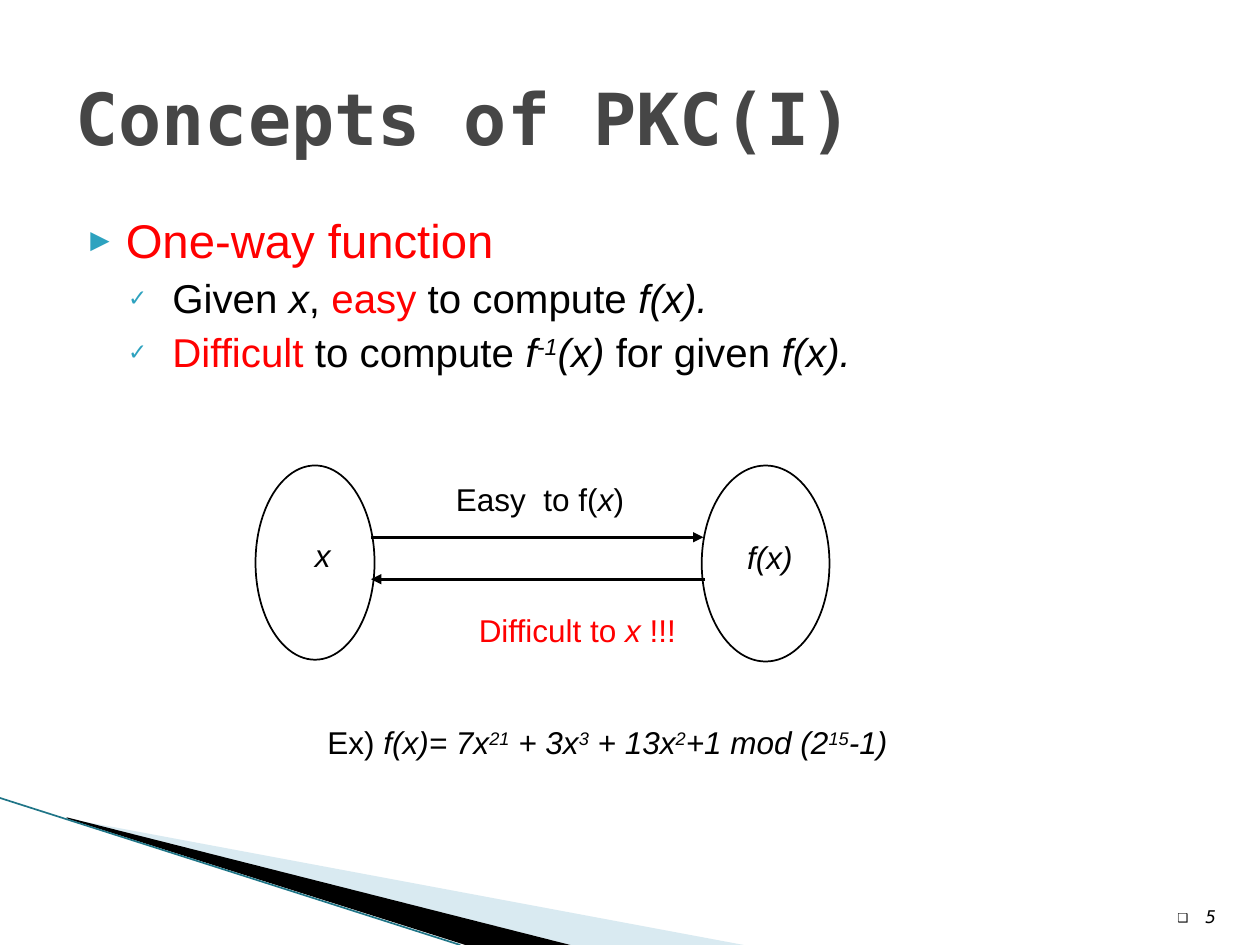
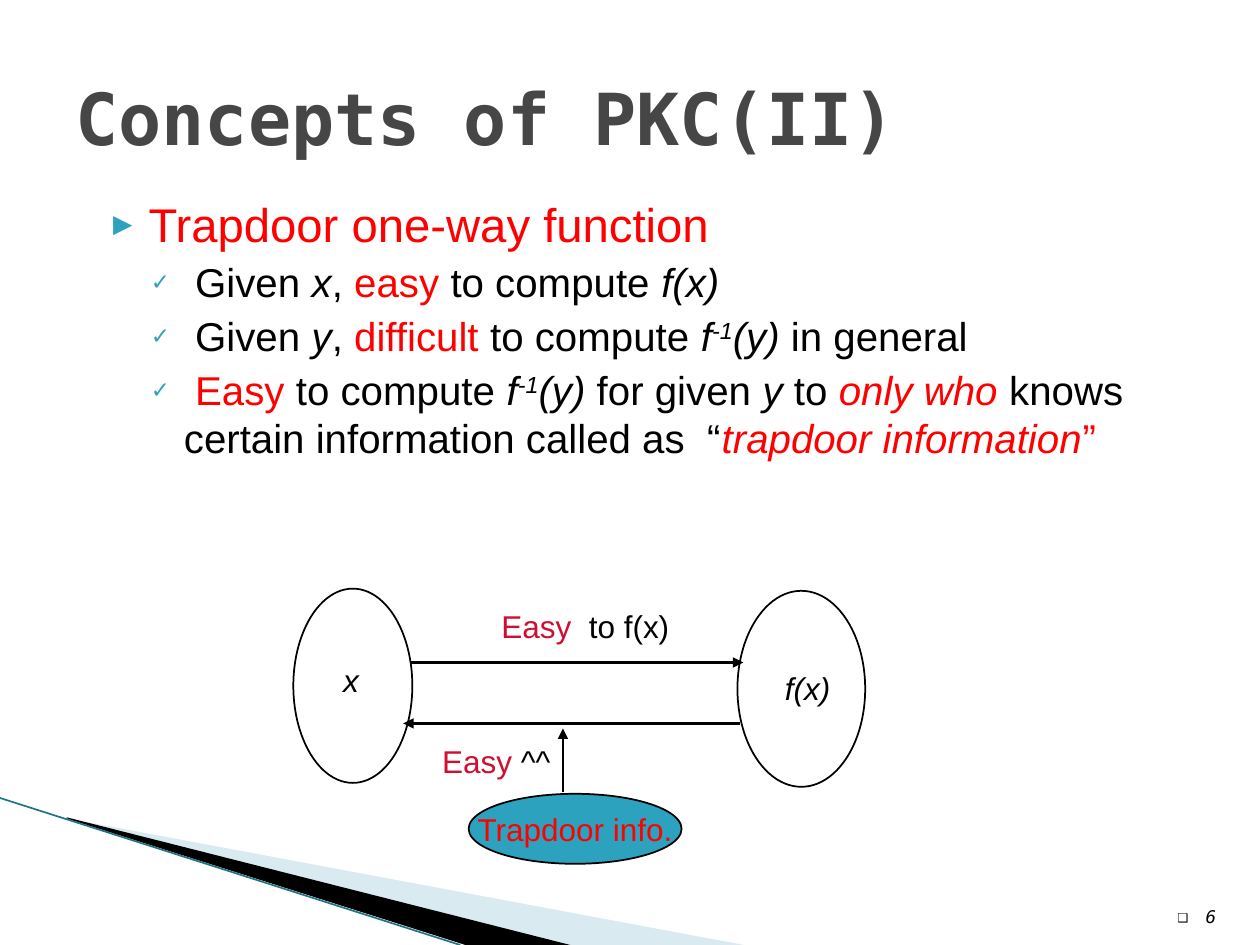
from dataclasses import dataclass

import pptx
import pptx.dml.color
import pptx.enum.shapes
import pptx.enum.text
import pptx.oxml
import pptx.oxml.ns
import pptx.util

Pt = pptx.util.Pt
Shape = pptx.enum.shapes.MSO_SHAPE
Line = pptx.enum.shapes.MSO_CONNECTOR
Align = pptx.enum.text.PP_ALIGN
Anchor = pptx.enum.text.MSO_ANCHOR


@dataclass(frozen=True)
class Theme:
    sans: str = "Arial"
    mono: str = "DejaVu Sans Mono"
    black: str = "000000"
    gray: str = "464646"
    red: str = "FF0000"
    crimson: str = "CF0E30"
    teal: str = "2DA2BF"
    edge: str = "1F7587"
    pale: str = "A0CBDC"
    title: int = 41
    head: int = 27
    item: int = 23
    label: int = 18
    page: int = 10


def rgb(code):
    return pptx.dml.color.RGBColor.from_string(code)


def add_xml(parent, tag, body="", **attrs):
    space = pptx.oxml.ns.nsdecls("a")
    pairs = " ".join(f'{key}="{val}"' for key, val in attrs.items())
    node = pptx.oxml.parse_xml(f"<a:{tag} {space} {pairs}>{body}</a:{tag}>")
    parent.append(node)


class Deck:
    def __init__(self, theme):
        self.theme = theme
        self.show = pptx.Presentation()
        self.show.slide_width, self.show.slide_height = Pt(720), Pt(540)
        self.slide = None

    def open(self, title, page):
        theme = self.theme
        self.slide = self.show.slides.add_slide(self.show.slide_layouts[6])
        self.band([(40, 468), (425, 540), (326, 540)], theme.pale, 40)
        self.band([(38, 467), (326, 540), (266, 540), (39, 468)], theme.black)
        self.line((0, 456), (263, 540), theme.edge, 0.95)
        frame = self.frame((36, 21.6, 648, 90), Anchor.MIDDLE, True)
        self.fill(frame.paragraphs[0], [(title, "b")], theme.title, theme.gray, theme.mono)
        frame = self.frame((663, 504, 39, 29), Anchor.BOTTOM, True)
        para = frame.paragraphs[0]
        para.alignment = Align.RIGHT
        self.mark(para, "❑", 16, -16, theme.black, 100)
        self.fill(para, [(str(page), "i")], theme.page, theme.black, theme.mono)

    def band(self, points, color, alpha=100):
        pen = self.slide.shapes.build_freeform(*points[0], scale=Pt(1))
        pen.add_line_segments(points[1:])
        shape = pen.convert_to_shape()
        shape.shadow.inherit = False
        shape.line.fill.background()
        shape.fill.solid()
        shape.fill.fore_color.rgb = rgb(color)
        if alpha < 100:
            tint = shape.fill._xPr.solidFill[0]
            add_xml(tint, "alpha", val=alpha * 1000)

    def line(self, start, end, color, width):
        line = self.slide.shapes.add_connector(
            Line.STRAIGHT, *(Pt(n) for n in start + end))
        line.line.color.rgb = rgb(color)
        line.line.width = Pt(width)
        add_xml(line._element.spPr, "effectLst")
        return line

    def arrow(self, start, end, width=1.5):
        line = self.line(start, end, self.theme.black, width)
        add_xml(line.line._get_or_add_ln(), "tailEnd", type="triangle")

    def oval(self, box, color=None, runs=None):
        shape = self.slide.shapes.add_shape(Shape.OVAL, *(Pt(n) for n in box))
        shape.shadow.inherit = False
        shape.line.color.rgb = rgb(self.theme.black)
        shape.line.width = Pt(1)
        if color:
            shape.fill.solid()
            shape.fill.fore_color.rgb = rgb(color)
        else:
            shape.fill.background()
        if runs:
            frame = shape.text_frame
            frame.word_wrap = False
            frame.vertical_anchor = Anchor.MIDDLE
            para = frame.paragraphs[0]
            para.alignment = Align.CENTER
            self.fill(para, runs, self.theme.label)

    def frame(self, box, anchor, wrap):
        frame = self.slide.shapes.add_textbox(*(Pt(n) for n in box)).text_frame
        frame.word_wrap = wrap
        frame.vertical_anchor = anchor
        return frame

    def fill(self, para, runs, size, color=None, face=None):
        theme = self.theme
        shades = {"r": theme.red, "c": theme.crimson}
        for text, style in runs:
            run = para.add_run()
            run.text = text
            font = run.font
            font.name = face or theme.sans
            font.size = Pt(size)
            font.bold = "b" in style
            font.italic = "i" in style
            shade = next((shades[key] for key in style if key in shades), None)
            font.color.rgb = rgb(shade or color or theme.black)
            if "^" in style:
                run._r.get_or_add_rPr().set("baseline", "30000")

    def mark(self, para, sign, left, hang, color, scale):
        props = para._p.get_or_add_pPr()
        props.set("marL", str(Pt(left)))
        props.set("indent", str(Pt(hang)))
        add_xml(props, "buClr", f'<a:srgbClr val="{color}"/>')
        add_xml(props, "buSzPct", val=scale * 1000)
        add_xml(props, "buFont", typeface=self.theme.mono)
        add_xml(props, "buChar", char=sign)

    def label(self, left, top, width, runs):
        frame = self.frame((left, top, width, 29), Anchor.TOP, False)
        self.fill(frame.paragraphs[0], runs, self.theme.label)

    def list(self, box, head, items):
        theme = self.theme
        frame = self.frame(box, Anchor.TOP, True)
        para = frame.paragraphs[0]
        self.mark(para, "▶", 28.8, -20.2, theme.teal, 68)
        self.fill(para, [(head, "r")], theme.head)
        for runs in items:
            para = frame.add_paragraph()
            para.space_before = Pt(3.2)
            self.mark(para, "✓", 49, -18, theme.teal, 65)
            self.fill(para, runs, theme.item)

    def pair(self, source, image):
        self.oval((*source, 68, 111))
        self.oval((*image, 73, 112))


def given(name):
    return [(" Given ", ""), (name, "i"), (", ", "")]


def inverse(name):
    return [(" to compute ", ""), ("f", "i"), ("-1", "i^"), (f"({name})", "i")]


def one_way(deck):
    deck.open("Concepts of PKC(I)", 5)
    deck.list((36, 117, 648, 356), "One-way function", [
        given("x") + [("easy", "r"), (" to compute ", ""), ("f(x).", "i")],
        [(" ", ""), ("Difficult", "r"), *inverse("x"),
         (" for given ", ""), ("f(x).", "i")],
    ])
    deck.pair((146, 266), (401, 266))
    deck.arrow((403, 331), (212, 331))
    deck.arrow((212, 307), (402, 307))
    deck.label(419.8, 304, 46, [("f(x)", "i")])
    deck.label(253.5, 270.7, 114, [("Easy  to f(", ""), ("x", "i"), (")", "")])
    deck.label(266.5, 345.6, 130, [("Difficult to ", "r"), ("x ", "ri"), ("!!!", "r")])
    deck.label(180, 409.7, 342, [
        ("Ex) ", ""), ("f(x)= 7x", "i"), ("21", "i^"), (" + 3x", "i"),
        ("3", "i^"), (" + 13x", "i"), ("2", "i^"), ("+1 mod (2", "i"),
        ("15", "i^"), ("-1)", "i")])
    deck.label(172.8, 303, 26, [("x", "i")])


def trapdoor(deck):
    deck.open("Concepts of PKC(II)", 6)
    deck.list((49, 108, 623, 204), "Trapdoor one-way function", [
        given("x") + [("easy", "r"), (" to compute ", ""), ("f(x)", "i")],
        given("y") + [("difficult", "r"), *inverse("y"), (" in general", "")],
        [(" ", ""), ("Easy", "r"), *inverse("y"), (" for given ", ""),
         ("y", "i"), (" to ", ""), ("only who", "ri"),
         (" knows certain information called as  “", ""),
         ("trapdoor information", "ri"), ("”", "r")],
    ])
    deck.pair((167.6, 336.4), (421.4, 337.6))
    deck.arrow((423, 413.4), (230.4, 413.4))
    deck.arrow((234.7, 378.6), (424.8, 378.6))
    deck.label(189, 374.4, 26, [("x", "i")])
    deck.label(441.4, 378.5, 46, [("f(x)", "i")])
    deck.label(279.4, 343.4, 114, [("Easy ", "c"), (" to f(x)", "")])
    deck.oval((267.8, 453.6, 121.7, 40), deck.theme.teal, [("Trapdoor info.", "r")])
    deck.arrow((321.7, 452.3), (321.7, 416.3), 1)
    deck.label(245.5, 420.5, 79, [("Easy", "c"), (" ^^", "")])


def main():
    deck = Deck(Theme())
    one_way(deck)
    trapdoor(deck)
    deck.show.save("out.pptx")


if __name__ == "__main__":
    main()
